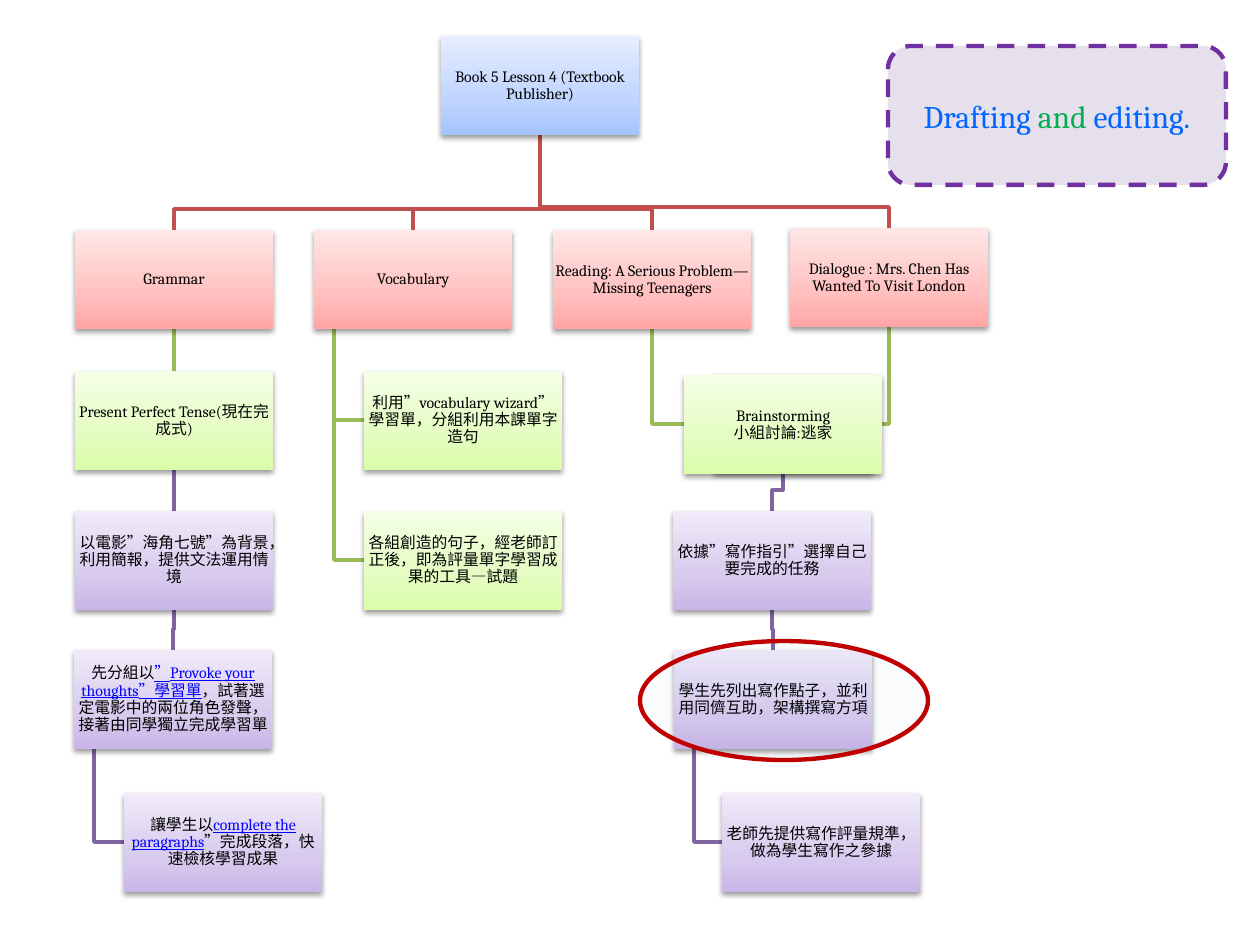
from lxml import etree
from pptx import Presentation
from pptx.dml.color import RGBColor
from pptx.enum.dml import MSO_LINE
from pptx.enum.shapes import MSO_CONNECTOR, MSO_SHAPE
from pptx.enum.text import MSO_ANCHOR, PP_ALIGN
from pptx.oxml import parse_xml
from pptx.oxml.ns import nsdecls, qn
from pptx.util import Pt

PX = 914400 / 126
BOX_W, BOX_H = 198, 99
ELBOW_RISE = 21     # height of a branch's bend above the child box
HANG_INSET = 20     # where a hanging branch leaves its parent
FONT = "Cambria"
LINK = "0000FF"

# bottom, middle and top of each level's gradient
GRADIENTS = {
    "lesson": ("A4C4FF", "BFD4FF", "E6EEFF"),
    "section": ("FFA6A5", "FFC0BF", "FFE7E7"),
    "activity": ("DAFDA7", "E4FCC2", "F5FFE7"),
    "task": ("C9B5E8", "D8CBEE", "F0EAF9"),
}
BRANCH_COLORS = {"section": "C0504D", "activity": "9BBB59", "task": "8064A2"}

# name: (level, left, top, text runs as (text, is link))
BOXES = {
    "lesson": ("lesson", 441, 36, [("Book 5 Lesson 4 (Textbook Publisher)", False)]),
    "dialogue": ("section", 790, 228,
                 [("Dialogue : Mrs. Chen Has Wanted To Visit London", False)]),
    "reading": ("section", 553, 230,
                [("Reading: A Serious Problem—Missing Teenagers", False)]),
    "brainstorming": ("activity", 684, 375, [("Brainstorming\n小組討論:逃家", False)]),
    "guide": ("task", 673, 511, [("依據”寫作指引”選擇自己要完成的任務", False)]),
    "ideas": ("task", 674, 650,
              [("學生先列出寫作點子，並利用同儕互助，架構撰寫方項", False)]),
    "criteria": ("task", 722, 793,
                 [("老師先提供寫作評量規準，做為學生寫作之參據", False)]),
    "vocabulary": ("section", 314, 230, [("Vocabulary", False)]),
    "wizard": ("activity", 364, 371,
               [("利用”vocabulary wizard” 學習單，分組利用本課單字造句", False)]),
    "sentences": ("activity", 364, 511,
                  [("各組創造的句子，經老師訂正後，即為評量單字學習成果的工具—試題", False)]),
    "grammar": ("section", 75, 230, [("Grammar", False)]),
    "tense": ("activity", 75, 371, [("Present Perfect Tense(現在完成式)", False)]),
    "film": ("task", 75, 511,
             [("以電影”海角七號”為背景，利用簡報，提供文法運用情境", False)]),
    "thoughts": ("task", 74, 650,
                 [("先分組以", False), ("”Provoke your thoughts”學習單", True),
                  ("，試著選定電影中的兩位角色發聲，接著由同學獨立完成學習單", False)]),
    "paragraphs": ("task", 124, 793,
                   [("讓學生以", False), ("complete the paragraphs", True),
                    ("”完成段落，快速檢核學習成果", False)]),
}

# parent, child, route
BRANCHES = [
    ("thoughts", "paragraphs", "hang"), ("film", "thoughts", "down"),
    ("tense", "film", "down"), ("grammar", "tense", "down"),
    ("lesson", "grammar", "down"), ("vocabulary", "sentences", "hang"),
    ("vocabulary", "wizard", "hang"), ("lesson", "vocabulary", "down"),
    ("ideas", "criteria", "hang"), ("guide", "ideas", "down"),
    ("brainstorming", "guide", "down"), ("reading", "brainstorming", "to left"),
    ("lesson", "reading", "down"), ("dialogue", "brainstorming", "to right"),
    ("lesson", "dialogue", "down"),
]
HEADING = [("Drafting ", "0066FF"), ("and ", "00B050"), ("editing.", "0066FF")]


def px(value):
    return round(value * PX)


def rgb(color):
    return RGBColor.from_string(color)


def set_line(line, color, width):
    line.color.rgb = rgb(color)
    line.width = Pt(width)


def add_plain_shape(kind, left, top, width, height):
    shape = slide.shapes.add_shape(kind, px(left), px(top), px(width), px(height))
    shape.shadow.inherit = False
    return shape


def add_run(paragraph, text, **formats):
    run = paragraph.add_run()
    run.text = text
    run.font.color.rgb = rgb(formats.pop("color"))
    for key, value in {"name": FONT, **formats}.items():
        setattr(run.font, key, value)


def route_points(parent, child, route):
    _, left, top, _ = BOXES[parent]
    _, child_left, child_top, _ = BOXES[child]
    start_x, start_y = left + BOX_W // 2, top + BOX_H
    if route == "down":
        end_x, bend_y = child_left + BOX_W // 2, child_top - ELBOW_RISE
        if start_x == end_x:
            return [(start_x, start_y), (end_x, child_top)]
        return [(start_x, start_y), (start_x, bend_y), (end_x, bend_y), (end_x, child_top)]
    if route == "hang":
        start_x = left + HANG_INSET
    end_x = child_left + (BOX_W if route == "to right" else 0)
    middle_y = child_top + BOX_H // 2
    return [(start_x, start_y), (start_x, middle_y), (end_x, middle_y)]


def add_branch(parent, child, route):
    points = [(px(x), px(y)) for x, y in route_points(parent, child, route)]
    if len(points) == 2:
        branch = slide.shapes.add_connector(MSO_CONNECTOR.STRAIGHT, *points[0], *points[1])
    else:
        outline = slide.shapes.build_freeform(*points[0])
        outline.add_line_segments(points[1:], close=False)
        branch = outline.convert_to_shape()
        branch.fill.background()
    set_line(branch.line, BRANCH_COLORS[BOXES[child][0]], 2)
    if len(points) == 2:
        etree.SubElement(branch.element.spPr, qn("a:effectLst"))
    else:
        branch.shadow.inherit = False


def add_box(level, left, top, runs, width=BOX_W):
    box = add_plain_shape(MSO_SHAPE.RECTANGLE, left, top, width, BOX_H)
    box.line.fill.background()
    stops = "".join(f'<a:gs pos="{position}"><a:srgbClr val="{color}"/></a:gs>'
                    for position, color in zip((0, 35000, 100000), GRADIENTS[level]))
    properties = box.element.spPr
    properties.find(qn("a:ln")).addprevious(parse_xml(
        f'<a:gradFill {nsdecls("a")} rotWithShape="1"><a:gsLst>{stops}</a:gsLst>'
        '<a:lin ang="16200000" scaled="0"/></a:gradFill>'))
    properties.find(qn("a:effectLst")).append(parse_xml(
        f'<a:outerShdw {nsdecls("a")} blurRad="40000" dist="20000" dir="5400000" '
        'rotWithShape="0"><a:srgbClr val="000000"><a:alpha val="38000"/></a:srgbClr>'
        '</a:outerShdw>'))
    frame = box.text_frame
    for side in ("left", "right", "top", "bottom"):
        setattr(frame, f"margin_{side}", px(1))
    frame.word_wrap = True
    frame.vertical_anchor = MSO_ANCHOR.MIDDLE
    paragraph = frame.paragraphs[0]
    paragraph.alignment = PP_ALIGN.CENTER
    paragraph.line_spacing = 0.9
    for text, is_link in runs:
        for number, line in enumerate(text.split("\n")):
            if number:
                paragraph.add_line_break()
            add_run(paragraph, line, size=Pt(9), underline=is_link,
                    color=LINK if is_link else "000000")


presentation = Presentation()
presentation.slide_width, presentation.slide_height = px(1260), px(945)
slide = presentation.slides.add_slide(presentation.slide_layouts[6])

for branch in BRANCHES:
    add_branch(*branch)
add_box("activity", 714, 374, [], width=159)    # backing of the brainstorming box
for box in BOXES.values():
    add_box(*box)

highlight = add_plain_shape(MSO_SHAPE.OVAL, 640, 641, 288, 119)
highlight.fill.solid()
highlight.fill.fore_color.rgb = rgb("4F81BD")
tint = highlight.element.spPr.find(qn("a:solidFill"))[0]
etree.SubElement(tint, qn("a:alpha"), val="3000")
set_line(highlight.line, "C00000", 2.5)

heading = add_plain_shape(MSO_SHAPE.ROUNDED_RECTANGLE, 888, 46, 338, 139)
heading.fill.solid()
heading.fill.fore_color.rgb = rgb("E6E0EC")
set_line(heading.line, "7030A0", 2.5)
heading.line.dash_style = MSO_LINE.DASH
heading.text_frame.word_wrap = True
heading.text_frame.vertical_anchor = MSO_ANCHOR.MIDDLE
heading_line = heading.text_frame.paragraphs[0]
heading_line.alignment = PP_ALIGN.CENTER
for text, color in HEADING:
    add_run(heading_line, text, size=Pt(18), color=color)

presentation.save("out.pptx")
